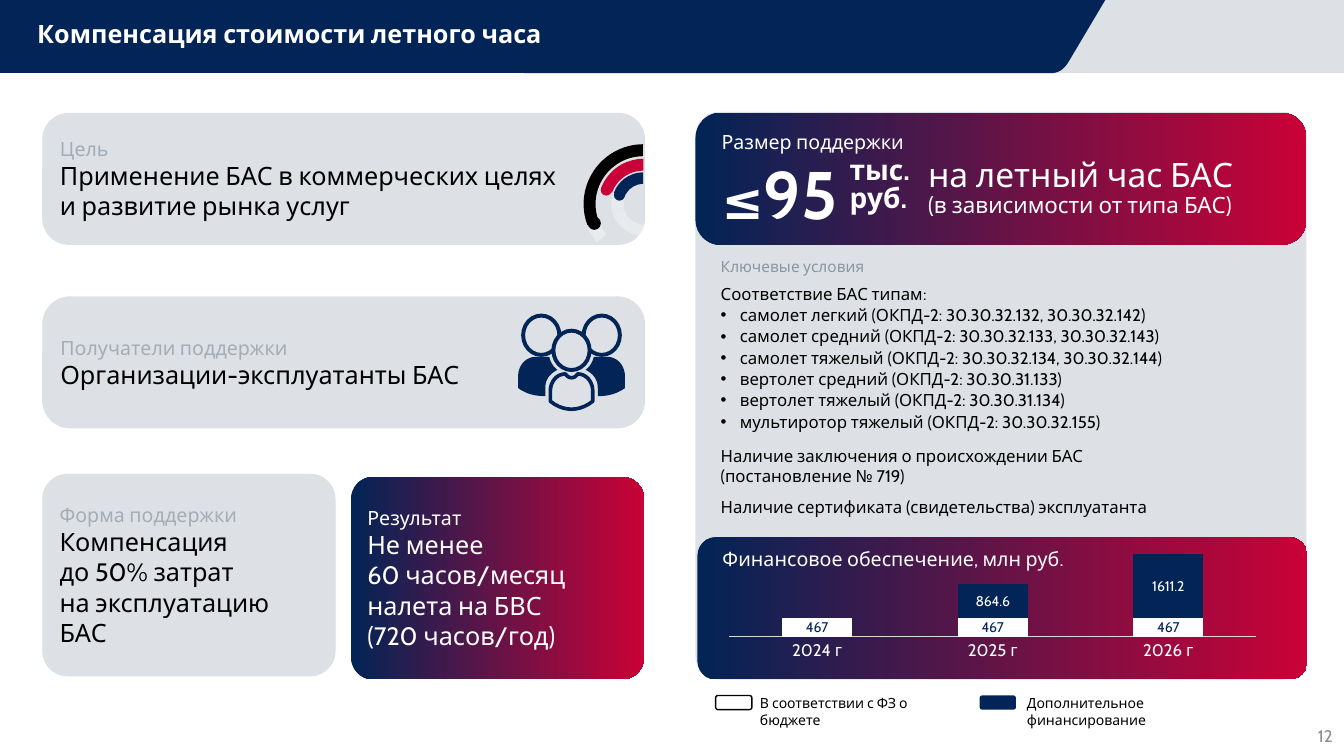
"""Build the slide on compensation of the flight hour cost."""
from dataclasses import dataclass

from lxml import etree
from pptx import Presentation
from pptx import util as u
from pptx.chart import data
from pptx.dml import color
from pptx.enum import chart as charts, shapes, text
from pptx.oxml import ns

FONT = "Cabin"
NAVY, RED, GREY, WHITE, BLACK = "022456", "C90237", "DDE1E5", "FFFFFF", "000000"
MUTED = "A2ADB8"
KIND = shapes.MSO_SHAPE
MID = text.MSO_ANCHOR.MIDDLE


@dataclass
class Para:
    words: str
    size: float
    hue: str = BLACK
    bold: bool = False
    lead: float | u.Length | None = None
    after: float = 0
    dot: bool = False


@dataclass
class Card:
    box: tuple
    round: float
    fills: tuple
    paras: tuple = ()


@dataclass
class Note:
    box: tuple
    paras: tuple


@dataclass
class Arc:
    radius: float
    start: float
    end: float
    width: float
    fills: tuple
    clear: bool = False


def tint(hue: str) -> color.RGBColor:
    return color.RGBColor.from_string(hue)


def place(shape, box: tuple) -> None:
    shape.left, shape.top, shape.width, shape.height = map(u.Pt, box)


def paint(shape, fills: tuple, line: str = "", width: float = 1) -> None:
    shape.shadow.inherit = False
    if len(fills) == 2:
        shape.fill.gradient()
        shape.fill.gradient_angle = 0
        for stop, hue in zip(shape.fill.gradient_stops, fills):
            stop.color.rgb = tint(hue)
    elif fills:
        shape.fill.solid()
        shape.fill.fore_color.rgb = tint(fills[0])
    else:
        shape.fill.background()
    if line:
        shape.line.color.rgb = tint(line)
        shape.line.width = u.Pt(width)
    else:
        shape.line.fill.background()


def write(frame, paras: tuple, align=text.PP_ALIGN.LEFT) -> None:
    frame.word_wrap = True
    frame.auto_size = text.MSO_AUTO_SIZE.NONE
    for i, para in enumerate(paras):
        p = frame.paragraphs[0] if i == 0 else frame.add_paragraph()
        p.text = para.words
        props = p._p.get_or_add_pPr()
        indent = u.Pt(13.7) if para.dot else 0
        props.set("marL", str(indent))
        props.set("indent", str(-indent))
        mark = etree.SubElement(props, ns.qn("a:buChar" if para.dot else "a:buNone"))
        if para.dot:
            mark.set("char", "•")
        p.alignment = align
        p.space_before, p.space_after = u.Pt(0), u.Pt(para.after)
        p.line_spacing = para.lead
        p.font.name, p.font.size, p.font.bold = FONT, u.Pt(para.size), para.bold
        p.font.color.rgb = tint(para.hue)


def add(tree, kind, box: tuple, fills: tuple, line: str = "", width: float = 1):
    shape = tree.add_shape(kind, *map(u.Pt, box))
    paint(shape, fills, line, width)
    return shape


def add_card(tree, card: Card) -> None:
    shape = add(tree, KIND.ROUNDED_RECTANGLE, card.box, card.fills)
    shape.adjustments[0] = card.round
    if card.paras:
        shape.text_frame.vertical_anchor = MID
        write(shape.text_frame, card.paras)


def add_note(tree, note: Note, align=text.PP_ALIGN.LEFT):
    frame = tree.add_textbox(*map(u.Pt, note.box)).text_frame
    write(frame, note.paras, align)
    return frame


def add_arc(tree, arc: Arc) -> None:
    r = arc.radius
    shape = add(tree, KIND.BLOCK_ARC, (459.7 - r, 145.8 - r, 2 * r, 2 * r), arc.fills)
    shape.rotation = 270
    for i, value in enumerate((arc.start, arc.end, arc.width)):
        shape.adjustments[i] = value
    if arc.clear:
        first = next(shape.element.iter(ns.qn("a:srgbClr")))
        etree.SubElement(first, ns.qn("a:alpha")).set("val", "30000")


def add_form(tree, start: tuple, parts: tuple, fills: tuple, line: str = "", flip: float = 0) -> None:
    """Draw straight parts of one point and cubic parts of three."""
    points, last = [start], start
    for part in parts:
        if len(part) == 1:
            points += part
        else:
            for t in (k / 10 for k in range(1, 11)):
                rate = ((1 - t) ** 3, 3 * t * (1 - t) ** 2, 3 * t * t * (1 - t), t ** 3)
                knots = (last, *part)
                points.append(tuple(sum(f * k[axis] for f, k in zip(rate, knots)) for axis in (0, 1)))
        last = part[-1]
    spots = [(u.Pt(flip - x if flip else x), u.Pt(y)) for x, y in points]
    form = tree.build_freeform(*spots[0])
    form.add_line_segments(spots[1:], close=True)
    paint(form.convert_to_shape(), fills, line, 2.6)


def add_crowd(tree) -> None:
    side = (((375.1, 255.6), (370.1, 261.4), (370.1, 268.6)), ((370.1, 277.2),),
            ((375.1, 280.8), (380.9, 283), (389.5, 283)), ((389.5, 277.2),),
            ((389.5, 271.4), (392.4, 267.1), (398.2, 264.2)),
            ((395.3, 262.1), (393.1, 258.5), (392.4, 254.9)))
    body = (((397.4, 267.1), (393.1, 272.9), (393.1, 279.4)), ((393.1, 286.6),),
            ((402.5, 294.2), (413.9, 294.2), (423.4, 286.6)), ((423.4, 279.4),),
            ((423.4, 272.9), (419, 267.1), (412.6, 267.1)),
            ((410.4, 270.7), (406.1, 270.7), (403.9, 267.1)))
    for flip, left in ((0, 373.7), (816.5, 416.9)):
        add_form(tree, (381.6, 254.9), side, (NAVY,), flip=flip)
        add(tree, KIND.OVAL, (left, 225.4, 25.9, 28.1), (GREY,), NAVY, 2.8)
    add_form(tree, (403.9, 267.1), body, (GREY,), NAVY)
    add(tree, KIND.OVAL, (395.3, 236.2, 25.9, 28.1), (GREY,), NAVY, 2.8)


def add_funds(tree) -> None:
    table = data.CategoryChartData()
    table.categories = ["2024 г", "2025 г", "2026 г"]
    table.add_series("Series 1", (467, 467, 467))
    table.add_series("Series 2", (None, 864.6, 1611.2))
    box = map(u.Pt, (509.8, 383.8, 398.2, 99.4))
    chart = tree.add_chart(charts.XL_CHART_TYPE.COLUMN_STACKED, *box, table).chart
    chart.has_legend = chart.has_title = False
    chart.font.name, chart.font.size = FONT, u.Pt(10)
    chart.font.color.rgb = tint(BLACK)
    years, sums = chart.category_axis, chart.value_axis
    sums.visible = sums.has_major_gridlines = False
    sums.minimum_scale, sums.maximum_scale = 0, 2500
    years.major_tick_mark = charts.XL_TICK_MARK.NONE
    years.format.line.color.rgb = tint("D9D9D9")
    years.format.line.width = u.Pt(0.75)
    font = years.tick_labels.font
    font.name, font.size, font.color.rgb = FONT, u.Pt(12), tint(WHITE)
    plot = chart.plots[0]
    plot.gap_width, plot.overlap, plot.vary_by_categories = 150, 100, False
    for row, fill, ink in zip(plot.series, (WHITE, NAVY), (NAVY, WHITE)):
        row.format.fill.solid()
        row.format.fill.fore_color.rgb = tint(fill)
        tags = row.data_labels
        tags.show_value, tags.position = True, charts.XL_LABEL_POSITION.CENTER
        tags.font.name, tags.font.size, tags.font.color.rgb = FONT, u.Pt(10), tint(ink)
    area = next(chart.element.iter(ns.qn("c:plotArea")))
    for old in area.findall(ns.qn("c:layout")):
        area.remove(old)
    layout = etree.Element(ns.qn("c:layout"))
    area.insert(0, layout)
    manual = etree.SubElement(layout, ns.qn("c:manualLayout"))
    for key, value in (("layoutTarget", "inner"), ("xMode", "edge"), ("yMode", "edge"),
                       ("x", "0.028"), ("y", "0"), ("w", "0.945"), ("h", "0.716")):
        etree.SubElement(manual, ns.qn("c:" + key)).set("val", value)


BLEND = (NAVY, RED)
CARDS = (
    Card((496.8, 80, 436.3, 405.4), 0.042, (GREY,)),
    Card((496.8, 80.6, 436.3, 94.3), 0.189, BLEND),
    Card((30.2, 80.6, 430.6, 94.3), 0.201, (GREY,), (
        Para("Цель", 14, MUTED), Para("Применение БАС в коммерческих целях\nи развитие рынка услуг", 18))),
    Card((30.2, 338.4, 209.5, 144.7), 0.125, (GREY,), (
        Para("Форма поддержки", 14, MUTED), Para("Компенсация\nдо 50% затрат\nна эксплуатацию БАС", 18))),
    Card((250.6, 340.6, 209.5, 144.7), 0.111, BLEND, (
        Para("Результат", 14, WHITE), Para("Не менее", 18, WHITE),
        Para("60 часов/месяц налета на БВС", 18, WHITE), Para("(720 часов/год)", 18, WHITE))),
    Card((30.2, 211.7, 430.6, 94.3), 0.21, (GREY,), (
        Para("Получатели поддержки", 14, MUTED), Para("Организации-эксплуатанты БАС", 18))),
    Card((498.2, 383.8, 435.6, 101.5), 0.126, BLEND),
)
NOTES = (
    Note((508.3, 89.3, 329, 24.5), (Para("Размер поддержки", 14, WHITE),)),
    Note((655.9, 109.4, 283, 51.1), (Para("на летный час БАС", 24, WHITE, lead=0.9),
                                     Para("(в зависимости от типа БАС)", 16, WHITE, lead=0.9))),
    Note((599.8, 108.7, 85, 49), (Para("тыс. руб.", 20, WHITE, True, 0.85),)),
    Note((509, 387.4, 425.5, 24.5), (Para("Финансовое обеспечение, млн руб.", 14, WHITE),)),
    Note((535.7, 492.5, 164.2, 19.4), (Para("В соответствии с ФЗ о бюджете", 10),)),
    Note((726.5, 492.5, 174.2, 19.4), (Para("Дополнительное финансирование", 10),)),
)
ARCS = (
    Arc(22.7, 107.46, 215.53, 0.18, (WHITE, GREY), True),
    Arc(42.8, 138.76, 215.79, 0.1, (WHITE, WHITE), True),
    Arc(32.4, 174.14, 216, 0.13, (RED,)),
    Arc(22.7, 174.28, 215.53, 0.18, (NAVY,)),
    Arc(42.8, 149.64, 215.79, 0.1, (BLACK,)),
)
DOTS = ((429.1, 131.8, 7.9, RED), (438.5, 135.4, 7.9, NAVY), (419.8, 154.8, 9.4, BLACK))
CRAFT = (
    "самолет легкий (ОКПД-2: 30.30.32.132, 30.30.32.142)",
    "самолет средний (ОКПД-2: 30.30.32.133, 30.30.32.143)",
    "самолет тяжелый (ОКПД-2: 30.30.32.134, 30.30.32.144)",
    "вертолет средний (ОКПД-2: 30.30.31.133)",
    "вертолет тяжелый (ОКПД-2: 30.30.31.134)",
    "мультиротор тяжелый (ОКПД-2: 30.30.32.155)",
)
TERMS = (
    Para("Ключевые условия", 11, "8896A4", lead=u.Pt(18), after=6),
    Para("Соответствие БАС типам:", 12, after=0.8),
    *(Para(name, 12, after=10 if name == CRAFT[-1] else 0.8, dot=True) for name in CRAFT),
    Para("Наличие заключения о происхождении БАС\n(постановление № 719)", 12, after=8),
    Para("Наличие сертификата (свидетельства) эксплуатанта", 12, after=8),
)


def main() -> None:
    deck = Presentation()
    deck.slide_width, deck.slide_height = u.Pt(960), u.Pt(540)
    tree = deck.slides.add_slide(deck.slide_layouts[1]).shapes
    add_form(tree, (960, 0), (((752.4, 0),), ((715, 52.3),), ((960, 52.3),)), (GREY,))
    add_form(tree, (0, 0), (((789.5, 0),), ((764, 43),), ((760.5, 49), (757, 52.3), (750, 52.3)),
                            ((0, 52),)), (NAVY,))
    for card in CARDS:
        add_card(tree, card)
    title, body = tree.title, tree.placeholders[1]
    for holder, box, paras in (
            (title, (26.6, 0, 671.8, 50.4),
             (Para("Компенсация стоимости летного часа", 18, WHITE, True, 0.9),)),
            (body, (507.6, 175, 424.8, 200.9), TERMS)):
        place(holder, box)
        holder.element.getparent().append(holder.element)
        write(holder.text_frame, paras)
    frame = title.text_frame
    frame.vertical_anchor = MID
    frame.margin_left = frame.margin_right = frame.margin_top = frame.margin_bottom = 0
    for note in NOTES:
        add_note(tree, note)
    limit = add_note(tree, Note((508.3, 105.1, 133.9, 65.5), (Para("≤", 36, WHITE, True),)))
    count = limit.paragraphs[0].add_run()
    count.text, count.font.size = "95", u.Pt(48)
    add_crowd(tree)
    for arc in ARCS:
        add_arc(tree, arc)
    for left, top, size, hue in DOTS:
        add(tree, KIND.FLOWCHART_CONNECTOR, (left, top, size, size), (hue,))
    add_funds(tree)
    for left, fill, line in ((511.2, WHITE, BLACK), (699.8, NAVY, "")):
        add(tree, KIND.ROUNDED_RECTANGLE, (left, 496.8, 25.9, 10.1), (fill,), line)
    page = add_note(tree, Note((743, 511.2, 216, 28.8), (Para("12", 12, "8C8C8C"),)), text.PP_ALIGN.RIGHT)
    page.vertical_anchor = MID
    deck.save("out.pptx")


if __name__ == "__main__":
    main()
